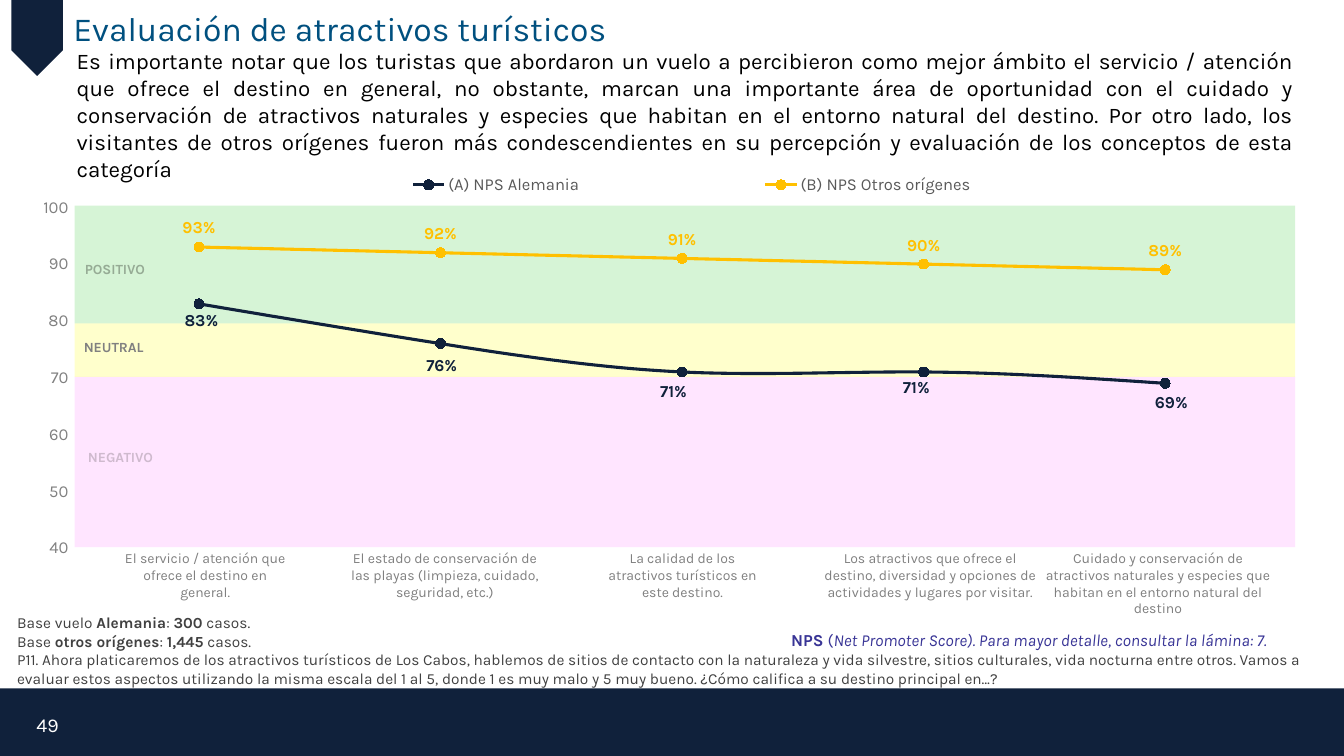
from lxml.etree import SubElement
from pptx import Presentation
from pptx.chart.data import CategoryChartData
from pptx.dml.color import RGBColor
from pptx.enum.chart import XL_CHART_TYPE, XL_LABEL_POSITION, XL_LEGEND_POSITION
from pptx.enum.chart import XL_MARKER_STYLE, XL_TICK_MARK
from pptx.enum.shapes import MSO_SHAPE
from pptx.enum.text import MSO_ANCHOR, PP_ALIGN
from pptx.oxml.ns import qn
from pptx.util import Cm, Pt

FONT = "Karla"
COLORS = {
    "navy": "10213B", "title": "00507F", "black": "000000", "white": "FFFFFF",
    "gray": "808080", "legend": "595959", "base": "414141", "note": "393596",
    "gold": "FFC000", "pink": "FFCCFF", "yellow": "FFFF00", "green": "33CC33",
    "positive": "96AB95", "negative": "CFBACE",
}
INTRO = ("Es importante notar que los turistas que abordaron un vuelo a percibieron como mejor "
         "ámbito el servicio / atención que ofrece el destino en general, no obstante, marcan una "
         "importante área de oportunidad con el cuidado y conservación de atractivos naturales y "
         "especies que habitan en el entorno natural del destino. Por otro lado, los visitantes de "
         "otros orígenes fueron más condescendientes en su percepción y evaluación de los "
         "conceptos de esta categoría")
QUESTION = ("P11. Ahora platicaremos de los atractivos turísticos de Los Cabos, hablemos de sitios "
            "de contacto con la naturaleza y vida silvestre, sitios culturales, vida nocturna entre "
            "otros. Vamos a evaluar estos aspectos utilizando la misma escala del 1 al 5, donde 1 es "
            "muy malo y 5 muy bueno. ¿Cómo califica a su destino principal en…?")
BASES = [
    [("Base vuelo ", ""), ("Alemania", "b"), (": ", ""), ("300", "b"), (" casos.", "")],
    [("Base ", ""), ("otros orígenes", "b"), (": ", ""), ("1,445", "b"), (" casos.", "")],
    [(QUESTION, "")],
]
NOTE = [[("NPS", "b"), (" (", ""),
         ("Net Promoter Score). Para mayor detalle, consultar la lámina: 7.", "i")]]
BANDS = [("pink", 9.5, 4.29, 50), ("yellow", 8.15, 1.35, 20), ("green", 5.18, 2.97, 20)]
ZONES = [
    ("POSITIVO", 1.88, 6.43, 2.03, "positive"),
    ("NEUTRAL", 1.8, 8.41, 2.13, "gray"),
    ("NEGATIVO", 1.93, 11.18, 2.21, "negative"),
]
CONCEPTS = [
    ("El servicio / atención que ofrece el destino en general.", 2.87, 4.6),
    ("El estado de conservación de las playas (limpieza, cuidado, seguridad, etc.)", 8.43, 5.56),
    ("La calidad de los atractivos turísticos en este destino.", 14.81, 4.78),
    ("Los atractivos que ofrece el destino, diversidad y opciones de actividades y lugares "
     "por visitar.", 20.52, 5.84),
    ("Cuidado y conservación de atractivos naturales y especies que habitan en el entorno "
     "natural del destino", 25.98, 6.4),
]
SERIES = [
    ("(A) NPS Alemania", (83, 76, 71, 71, 69), "navy", XL_LABEL_POSITION.BELOW),
    ("(B) NPS Otros orígenes", (93, 92, 91, 90, 89), "gold", XL_LABEL_POSITION.ABOVE),
]
LABEL_SHIFTS = [(0.002, -0.005), (0.001, 0.007), (-0.007, 0.002), (-0.006, -0.007), (0.005, 0.002)]


def rgb(color):
    return RGBColor.from_string(COLORS[color])


def add_text(s, text, left, top, width, height, size=10, color="black", bold=False,
             align=PP_ALIGN.LEFT, anchor=MSO_ANCHOR.TOP, wrap=True):
    tf = s.shapes.add_textbox(Cm(left), Cm(top), Cm(width), Cm(height)).text_frame
    tf.word_wrap = wrap
    tf.vertical_anchor = anchor
    paragraphs = [[(text, "b" if bold else "")]] if isinstance(text, str) else text
    for i, runs in enumerate(paragraphs):
        p = tf.add_paragraph() if i else tf.paragraphs[0]
        p.alignment = align
        for content, style in runs:
            r = p.add_run()
            r.text = content
            format_font(r.font, size, color, "b" in style)
            r.font.italic = "i" in style


def format_font(font, size, color, bold=False):
    font.name = FONT
    font.size = Pt(size)
    font.bold = bold
    font.color.rgb = rgb(color)


def add_block(s, kind, left, top, width, height, color, alpha=100):
    sp = s.shapes.add_shape(kind, Cm(left), Cm(top), Cm(width), Cm(height))
    sp.shadow.inherit = False
    sp.fill.solid()
    sp.fill.fore_color.rgb = rgb(color)
    sp.line.fill.background()
    if alpha < 100:
        clr = sp.fill._xPr.find(".//" + qn("a:srgbClr"))
        SubElement(clr, qn("a:alpha"), val=str(alpha * 1000))
    return sp


def set_layout(parent, index, **values):
    for old in parent.findall(qn("c:layout")):
        parent.remove(old)
    layout = SubElement(parent, qn("c:layout"))
    manual = SubElement(layout, qn("c:manualLayout"))
    for tag, val in values.items():
        SubElement(manual, qn("c:" + tag), val=str(val))
    parent.insert(index, layout)


def format_series(ser, color, position):
    ser.smooth = True
    ser.format.line.color.rgb = rgb(color)
    ser.format.line.width = Pt(2.25)
    ser.marker.style = XL_MARKER_STYLE.CIRCLE
    ser.marker.size = 7
    ser.marker.format.fill.solid()
    ser.marker.format.fill.fore_color.rgb = rgb(color)
    ser.marker.format.line.color.rgb = rgb(color)
    labels = ser.data_labels
    labels.show_value = True
    labels.number_format = '#"%"'
    labels.number_format_is_linked = False
    labels.position = position
    format_font(labels.font, 12, color, True)


def shift_labels(ser, color, position):
    for i, (x, y) in enumerate(LABEL_SHIFTS):
        label = ser.points[i].data_label
        format_font(label.font, 12, color, True)
        label.position = position
        set_layout(ser._element.findall(".//" + qn("c:dLbl"))[i], 1, x=x, y=y)


def add_nps_chart(s):
    data = CategoryChartData(number_format="0")
    data.categories = ["1", "2", "3", "4", "5"]
    for name, values, _, _ in SERIES:
        data.add_series(name, values)
    chart = s.shapes.add_chart(XL_CHART_TYPE.LINE_MARKERS, Cm(1.09), Cm(3.84),
                               Cm(31.32), Cm(10.26), data).chart
    chart.has_title = False
    format_font(chart.font, 10, "black")
    chart.plots[0].vary_by_categories = False
    chart.category_axis.visible = False
    axis = chart.value_axis
    axis.minimum_scale, axis.maximum_scale, axis.major_unit = 40, 100, 10
    axis.has_major_gridlines = False
    axis.major_tick_mark = XL_TICK_MARK.OUTSIDE
    axis.format.line.fill.background()
    axis.tick_labels.number_format = "0"
    axis.tick_labels.number_format_is_linked = False
    format_font(axis.tick_labels.font, 12, "gray")
    chart.has_legend = True
    chart.legend.position = XL_LEGEND_POSITION.TOP
    chart.legend.include_in_layout = False
    format_font(chart.legend.font, 12, "legend")
    set_layout(chart.legend._element, 1, xMode="edge", yMode="edge",
               x=0.14, y=0.04, w=0.75, h=0.08)
    set_layout(chart._chartSpace.find(".//" + qn("c:plotArea")), 0, layoutTarget="inner",
               xMode="edge", yMode="edge", x=0.035, y=0.135, w=0.986, h=0.837)
    for ser, (_, _, color, position) in zip(chart.plots[0].series, SERIES):
        format_series(ser, color, position)
    shift_labels(chart.plots[0].series[0], "navy", XL_LABEL_POSITION.BELOW)


def main():
    prs = Presentation()
    prs.slide_width, prs.slide_height = Cm(33.87), Cm(19.05)
    s = prs.slides.add_slide(prs.slide_layouts[6])
    add_block(s, MSO_SHAPE.RECTANGLE, 0, 17.35, 33.87, 1.7, "navy")
    add_text(s, "49", 0.05, 17.7, 1.68, 1.12, size=14, color="white",
             align=PP_ALIGN.RIGHT, anchor=MSO_ANCHOR.MIDDLE)
    add_block(s, MSO_SHAPE.PENTAGON, -0.03, 0.3, 1.93, 1.3, "navy").rotation = 90
    add_text(s, "Evaluación de atractivos turísticos", 1.6, 0.08, 21.21, 1.27,
             size=24, color="title")
    for color, top, height, alpha in BANDS:
        add_block(s, MSO_SHAPE.RECTANGLE, 1.88, top, 30.76, height, color, alpha)
    add_nps_chart(s)
    for text, left, top, width, color in ZONES:
        add_text(s, text, left, top, width, 0.69, color=color, bold=True,
                 align=PP_ALIGN.CENTER, wrap=False)
    for text, left, width in CONCEPTS:
        add_text(s, text, left, 13.72, width, 1.55, color="gray", align=PP_ALIGN.CENTER)
    add_text(s, NOTE, 19.69, 15.75, 14.17, 0.76, size=12, color="note", wrap=False)
    add_text(s, BASES, 0.18, 15.33, 33.68, 2.14, size=11, color="base")
    add_text(s, INTRO, 1.68, 1.07, 31.17, 3.68, size=16, align=PP_ALIGN.JUSTIFY)
    prs.save("out.pptx")


if __name__ == "__main__":
    main()
